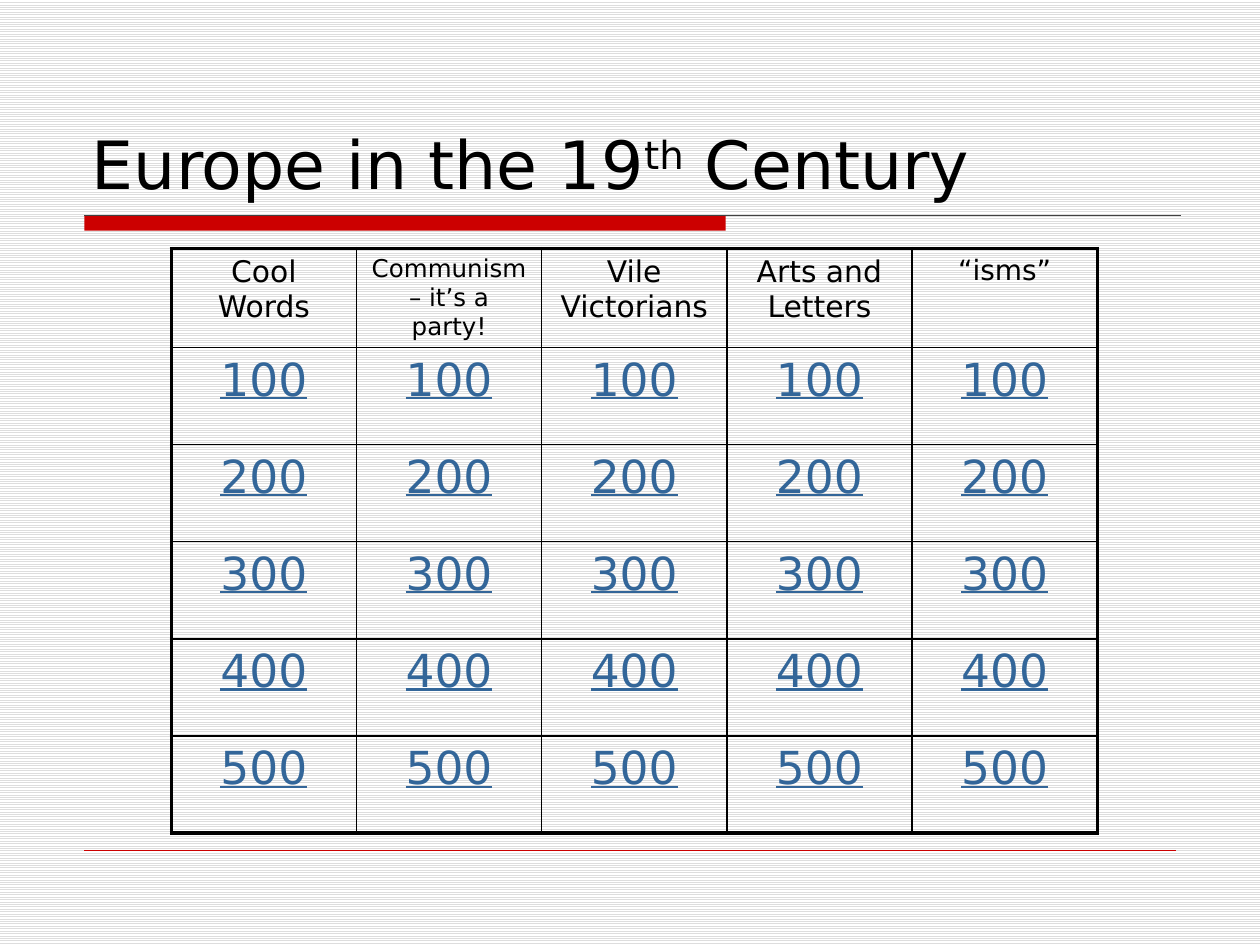
from dataclasses import dataclass

from lxml import etree
from pptx import Presentation
from pptx import util as u
from pptx.dml.color import RGBColor
from pptx.enum import dml, shapes, text
from pptx.oxml import ns


@dataclass(frozen=True)
class Theme:
    font: str = "DejaVu Sans"
    ink: str = "000000"
    link: str = "336699"
    red: str = "CC0000"
    rule: str = "404040"
    paper: str = "FFFFFF"
    stripe: str = "DDDDDD"
    title: float = 38
    score: float = 26
    thin: float = 1
    thick: float = 2.25


THEME = Theme()
WIDE, HIGH = u.Inches(10), u.Inches(7.5)
HEADS = [
    ("Cool Words", 17),
    ("Communism – it’s a party!", 14),
    ("Vile Victorians", 17),
    ("Arts and Letters", 17),
    ("“isms”", 16),
]
SCORES = [100, 200, 300, 400, 500]


def color(code):
    return RGBColor.from_string(code)


def place(left, top, width, height):
    return (int(left * WIDE), int(top * HIGH),
            int(width * WIDE), int(height * HIGH))


def format_all(item, values):
    for name, value in values.items():
        setattr(item, name, value)


def add_run(para, words, size, code, line=False):
    run = para.add_run()
    run.text = words
    format_all(run.font, {"name": THEME.font, "size": u.Pt(size),
                          "underline": line, "bold": False})
    run.font.color.rgb = color(code)
    return run


def paint_back(slide):
    fill = slide.background.fill
    fill.patterned()
    fill.pattern = dml.MSO_PATTERN.LIGHT_HORIZONTAL
    fill.fore_color.rgb = color(THEME.stripe)
    fill.back_color.rgb = color(THEME.paper)


def add_bar(slide, box, code):
    bar = slide.shapes.add_shape(shapes.MSO_SHAPE.RECTANGLE, *place(*box))
    bar.shadow.inherit = False
    bar.fill.solid()
    bar.fill.fore_color.rgb = color(code)
    bar.line.fill.background()


def add_rule(slide, left, right, top, code, width):
    x, y, span, _ = place(left, top, right - left, 0)
    rule = slide.shapes.add_connector(
        shapes.MSO_CONNECTOR.STRAIGHT, x, y, x + span, y)
    rule.line.color.rgb = color(code)
    rule.line.width = u.Pt(width)
    etree.SubElement(rule._element.spPr, ns.qn("a:effectLst"))


def set_title(slide, parts):
    title = slide.shapes.title
    box = place(0.063, 0.044, 0.875, 0.177)
    format_all(title, dict(zip(("left", "top", "width", "height"), box)))
    frame = title.text_frame
    format_all(frame, {"vertical_anchor": text.MSO_ANCHOR.BOTTOM,
                       "auto_size": text.MSO_AUTO_SIZE.NONE,
                       "word_wrap": True})
    para = frame.paragraphs[0]
    para.alignment = text.PP_ALIGN.LEFT
    for words, base in parts:
        run = add_run(para, words, THEME.title, THEME.ink)
        if base:
            run._r.get_or_add_rPr().set("baseline", str(base * 1000))


def add_edge(cell, side, width):
    props = cell._tc.get_or_add_tcPr()
    edge = etree.SubElement(props, ns.qn("a:ln" + side), w=str(u.Pt(width)))
    fill = etree.SubElement(edge, ns.qn("a:solidFill"))
    etree.SubElement(fill, ns.qn("a:srgbClr"), val=THEME.ink)


def lead_space(para, share):
    props = para._p.get_or_add_pPr()
    space = etree.SubElement(props, ns.qn("a:spcBef"))
    etree.SubElement(space, ns.qn("a:spcPct"), val=str(share * 1000))


def fill_cell(cell, words, size, code, line, outer):
    for side in "LRTB":
        add_edge(cell, side, THEME.thick if side in outer else THEME.thin)
    cell.fill.background()
    para = cell.text_frame.paragraphs[0]
    para.alignment = text.PP_ALIGN.CENTER
    lead_space(para, 20)
    add_run(para, words, size, code, line)


def add_board(slide):
    rows = [[(words, size, THEME.ink, False) for words, size in HEADS]]
    rows += [[(str(score), THEME.score, THEME.link, True)] * len(HEADS)
             for score in SCORES]
    box = place(0.136, 0.263, 0.735, 0.617)
    last_row, last_col = len(rows) - 1, len(HEADS) - 1
    board = slide.shapes.add_table(len(rows), len(HEADS), *box).table
    format_all(board, {"first_row": False, "horz_banding": False})
    for r, row in enumerate(rows):
        for c, entry in enumerate(row):
            tests = {"L": c == 0, "R": c == last_col,
                     "T": r == 0, "B": r == last_row}
            outer = {side for side, hit in tests.items() if hit}
            fill_cell(board.cell(r, c), *entry, outer)


def main():
    deck = Presentation()
    format_all(deck, {"slide_width": WIDE, "slide_height": HIGH})
    slide = deck.slides.add_slide(deck.slide_layouts[5])
    paint_back(slide)
    add_bar(slide, (0.067, 0.228, 0.509, 0.016), THEME.red)
    add_rule(slide, 0.067, 0.937, 0.228, THEME.rule, 0.75)
    add_rule(slide, 0.067, 0.933, 0.9, THEME.red, 0.25)
    set_title(slide, [("Europe in the 19", 0), ("th", 30), (" Century", 0)])
    add_board(slide)
    deck.save("out.pptx")


if __name__ == "__main__":
    main()
